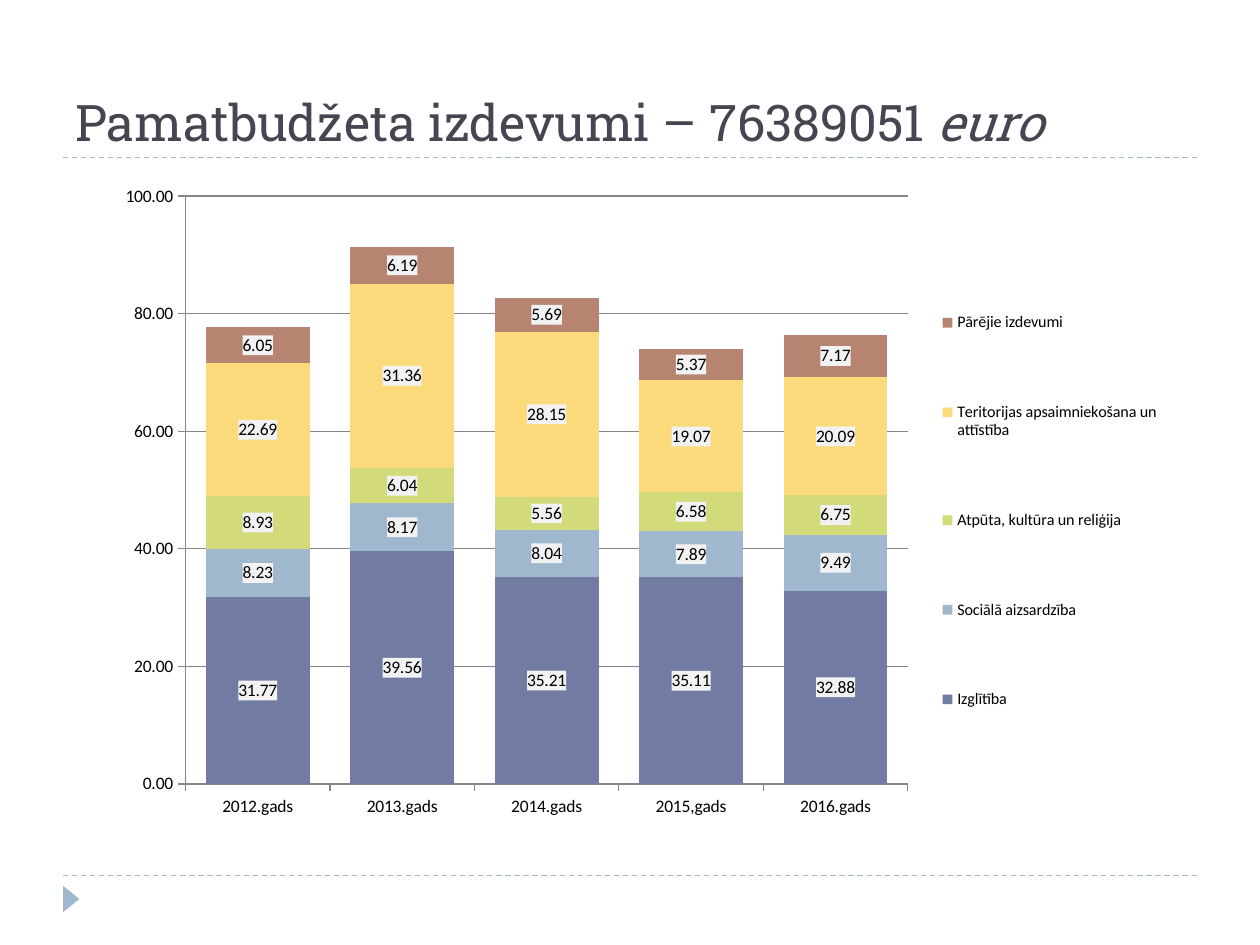
from lxml import etree
from pptx import Presentation
from pptx.chart.data import CategoryChartData
from pptx.dml.color import RGBColor
from pptx.enum.chart import XL_CHART_TYPE, XL_LABEL_POSITION, XL_LEGEND_POSITION, XL_TICK_MARK
from pptx.enum.dml import MSO_LINE
from pptx.enum.shapes import MSO_CONNECTOR, MSO_SHAPE
from pptx.enum.text import MSO_ANCHOR
from pptx.oxml import parse_xml
from pptx.oxml.ns import nsdecls, qn
from pptx.util import Inches, Pt

STACKED = XL_CHART_TYPE.COLUMN_STACKED
CENTER = XL_LABEL_POSITION.CENTER
LEGEND_RIGHT = XL_LEGEND_POSITION.RIGHT
TICK_OUT = XL_TICK_MARK.OUTSIDE
DASH = MSO_LINE.DASH
STRAIGHT = MSO_CONNECTOR.STRAIGHT
TRIANGLE = MSO_SHAPE.ISOSCELES_TRIANGLE
BOTTOM = MSO_ANCHOR.BOTTOM

COLORS = {
    "title": "464653",
    "accent": "9FB8CD",
    "text": "000000",
    "axis": "868686",
    "label": "F2F2F2",
}
HEADING_FONT, CHART_FONT = "Roboto Slab", "Calibri"
NUMBER_FORMAT = "0.00"

YEARS = ["2012.gads", "2013.gads", "2014.gads", "2015,gads", "2016.gads"]
# Spending area, fill colour, values by year
EXPENSES = [
    ("Izglītība", "727CA3", (31.77, 39.56, 35.21, 35.11, 32.88)),
    ("Sociālā aizsardzība", "9FB8CD", (8.23, 8.17, 8.04, 7.89, 9.49)),
    ("Atpūta, kultūra un reliģija", "D2DA7A", (8.93, 6.04, 5.56, 6.58, 6.75)),
    ("Teritorijas apsaimniekošana un attīstība", "FADA7A",
     (22.69, 31.36, 28.15, 19.07, 20.09)),
    ("Pārējie izdevumi", "B88472", (6.05, 6.19, 5.69, 5.37, 7.17)),
]


def rgb(value):
    return RGBColor.from_string(value)


def format_font(font, size=10, color=COLORS["text"], name=CHART_FONT, italic=False):
    font.size, font.name, font.italic = Pt(size), name, italic
    font.color.rgb = rgb(color)


def add_text(paragraph, text, **style):
    run = paragraph.add_run()
    run.text = text
    format_font(run.font, **style)


def manual_layout(x, y, w, h, inner=False):
    target = '<c:layoutTarget val="inner"/>' if inner else ""
    return parse_xml(
        f'<c:layout {nsdecls("c")}><c:manualLayout>{target}'
        '<c:xMode val="edge"/><c:yMode val="edge"/>'
        f'<c:x val="{x}"/><c:y val="{y}"/><c:w val="{w}"/><c:h val="{h}"/>'
        '</c:manualLayout></c:layout>')


class SlideBuilder:
    def __init__(self, slide, colors):
        self.slide, self.colors = slide, colors

    def dashed_rule(self, y):
        rule = self.slide.shapes.add_connector(
            STRAIGHT, Inches(0.5), Inches(y), Inches(9.5), Inches(y))
        rule.line.color.rgb = rgb(self.colors["accent"])
        rule.line.width = Pt(0.75)
        rule.line.dash_style = DASH
        etree.SubElement(rule.element.spPr, qn("a:effectLst"))

    def marker(self, x, y, w, h):
        marker = self.slide.shapes.add_shape(
            TRIANGLE, Inches(x), Inches(y), Inches(w), Inches(h))
        marker.rotation = 90
        marker.shadow.inherit = False
        marker.fill.solid()
        marker.fill.fore_color.rgb = rgb(self.colors["accent"])
        marker.line.fill.background()

    def title(self, parts, x, y, w, h):
        frame = self.slide.shapes.add_textbox(
            Inches(x), Inches(y), Inches(w), Inches(h)).text_frame
        frame.word_wrap = True
        frame.vertical_anchor = BOTTOM
        for text, italic in parts:
            add_text(frame.paragraphs[0], text, size=28.8, name=HEADING_FONT,
                     color=self.colors["title"], italic=italic)

    def stacked_chart(self, years, expenses, x, y, w, h):
        data = CategoryChartData(number_format=NUMBER_FORMAT)
        data.categories = years
        for area, _, values in expenses:
            data.add_series(area, values)
        chart = self.slide.shapes.add_chart(
            STACKED, Inches(x), Inches(y), Inches(w), Inches(h), data).chart
        chart.has_title = False
        format_font(chart.font)

        plot = chart.plots[0]
        plot.gap_width, plot.overlap = 39, 100
        plot.vary_by_categories = False
        for series, (_, color, _) in zip(plot.series, expenses):
            series.format.fill.solid()
            series.format.fill.fore_color.rgb = rgb(color)
            self.value_labels(series.data_labels)

        self.axes(chart)
        self.legend(chart)
        plot_area = chart.element.chart.plotArea
        for old in plot_area.findall(qn("c:layout")):
            plot_area.remove(old)
        plot_area.insert(0, manual_layout(0.108, 0.042, 0.637, 0.864, inner=True))

    def value_labels(self, labels):
        labels.show_value = True
        labels.position = CENTER
        labels.number_format = NUMBER_FORMAT
        labels.number_format_is_linked = False
        format_font(labels.font)
        # Light box behind each value
        box = parse_xml(
            f'<c:spPr {nsdecls("c", "a")}><a:solidFill>'
            f'<a:srgbClr val="{self.colors["label"]}"/></a:solidFill></c:spPr>')
        labels.font  # text properties follow the box
        labels._element.find(qn("c:numFmt")).addnext(box)

    def axes(self, chart):
        values = chart.value_axis
        values.minimum_scale, values.maximum_scale, values.major_unit = 0, 100, 20
        values.has_major_gridlines = True
        values.tick_labels.number_format = NUMBER_FORMAT
        values.tick_labels.number_format_is_linked = False
        for axis in (values, chart.category_axis):
            axis.major_tick_mark = TICK_OUT
            format_font(axis.tick_labels.font)
        for part in (values, chart.category_axis, values.major_gridlines):
            part.format.line.color.rgb = rgb(self.colors["axis"])
            part.format.line.width = Pt(0.75)

    def legend(self, chart):
        chart.has_legend = True
        legend = chart.legend
        legend.position = LEGEND_RIGHT
        legend.include_in_layout = False
        format_font(legend.font, size=9.2)
        element = chart.element.chart.find(qn("c:legend"))
        for old in element.findall(qn("c:layout")):
            element.remove(old)
        element.find(qn("c:legendPos")).addnext(manual_layout(0.76, 0.11, 0.22, 0.79))


def main():
    deck = Presentation()
    deck.slide_width, deck.slide_height = Inches(10), Inches(7.5)
    builder = SlideBuilder(deck.slides.add_slide(deck.slide_layouts[6]), COLORS)

    # Footer and header decoration
    for y in (6.95, 1.25):
        builder.dashed_rule(y)
    builder.marker(0.46, 7.07, 0.21, 0.13)

    # Title and spending chart
    builder.title([("Pamatbudžeta izdevumi – 76389051 ", False), ("euro", True)],
                  0.5, 0.17, 9, 1.08)
    builder.stacked_chart(YEARS, EXPENSES, 0.5, 1.33, 9, 5.4)
    deck.save("out.pptx")


if __name__ == "__main__":
    main()
